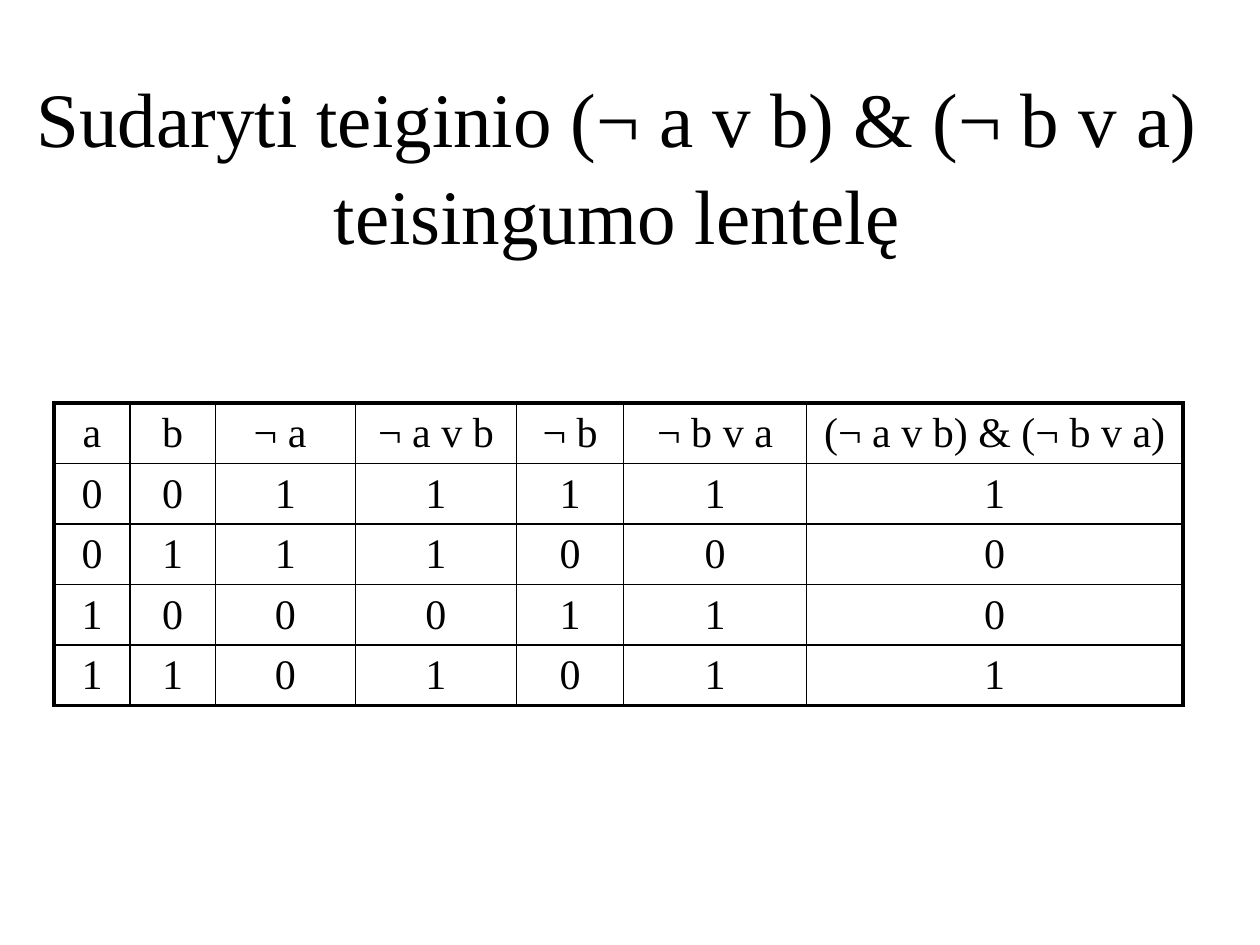
from dataclasses import dataclass

import lxml.etree
import pptx
import pptx.dml.color
import pptx.enum.text
import pptx.oxml.ns
import pptx.util

Inches = pptx.util.Inches
Pt = pptx.util.Pt
COLOURS = {"ink": "000000", "paper": "FFFFFF"}
FONT = "Times New Roman"
TITLE_LINES = ("Sudaryti teiginio (¬ a v b) & (¬ b v a)", "teisingumo lentelę")
ROW_HEIGHT = 0.47
THIN, THICK = 1, 2.25


@dataclass(frozen=True)
class Column:
    heading: str
    width: float
    values: str


COLUMNS = (
    Column("a", 0.6, "0011"),
    Column("b", 0.68, "0101"),
    Column("¬ a ", 1.11, "1100"),
    Column("¬ a v b", 1.28, "1101"),
    Column("¬ b", 0.85, "1010"),
    Column("¬ b v a", 1.45, "1011"),
    Column("(¬ a v b) & (¬ b v a)", 2.99, "1001"),
)


def colour(name: str) -> pptx.dml.color.RGBColor:
    return pptx.dml.color.RGBColor.from_string(COLOURS[name])


def add_span(para, text: str, size: float) -> None:
    para.alignment = pptx.enum.text.PP_ALIGN.CENTER
    span = para.add_run()
    span.text = text
    span.font.name = FONT
    span.font.size = Pt(size)
    span.font.color.rgb = colour("ink")


def add_title(page) -> None:
    box = page.shapes.add_textbox(Inches(0), Inches(0.67), Inches(9.8), Inches(1.25))
    frame = box.text_frame
    frame.word_wrap = True
    frame.vertical_anchor = pptx.enum.text.MSO_ANCHOR.MIDDLE
    para = frame.paragraphs[0]
    para.line_spacing = 1.05
    for index, line in enumerate(TITLE_LINES):
        if index:
            para.add_line_break()
        add_span(para, line, 44)


def add_border(cell, side: str, width: float) -> None:
    qn = pptx.oxml.ns.qn
    line = lxml.etree.Element(qn(f"a:ln{side}"), w=str(int(Pt(width))))
    fill = lxml.etree.SubElement(line, qn("a:solidFill"))
    lxml.etree.SubElement(fill, qn("a:srgbClr"), val=COLOURS["ink"])
    properties = cell._tc.get_or_add_tcPr()
    position = sum(child.tag.startswith(qn("a:ln")) for child in properties)
    properties.insert(position, line)


def fill_cell(cell, text: str, outer_sides: dict[str, bool]) -> None:
    cell.fill.solid()
    cell.fill.fore_color.rgb = colour("paper")
    cell.margin_top = cell.margin_bottom = Inches(0.04)
    cell.vertical_anchor = pptx.enum.text.MSO_ANCHOR.MIDDLE
    add_span(cell.text_frame.paragraphs[0], text, 24)
    for side, outer in outer_sides.items():
        add_border(cell, side, THICK if outer else THIN)


def add_truth_table(page) -> None:
    row_count = len(COLUMNS[0].values) + 1
    table = page.shapes.add_table(
        row_count, len(COLUMNS), Inches(0.43), Inches(3.2),
        Inches(sum(column.width for column in COLUMNS)),
        Inches(ROW_HEIGHT * row_count),
    ).table
    table.first_row = table.horz_banding = False
    for row in table.rows:
        row.height = Inches(ROW_HEIGHT)
    for x, column in enumerate(COLUMNS):
        table.columns[x].width = Inches(column.width)
        for y, text in enumerate((column.heading, *column.values)):
            outer_sides = {
                "L": x == 0,
                "R": x == len(COLUMNS) - 1,
                "T": y == 0,
                "B": y == row_count - 1,
            }
            fill_cell(table.cell(y, x), text, outer_sides)


def main() -> None:
    deck = pptx.Presentation()
    deck.slide_width = Inches(10)
    deck.slide_height = Inches(7.5)
    page = deck.slides.add_slide(deck.slide_layouts[6])
    add_title(page)
    add_truth_table(page)
    deck.save("out.pptx")


if __name__ == "__main__":
    main()
